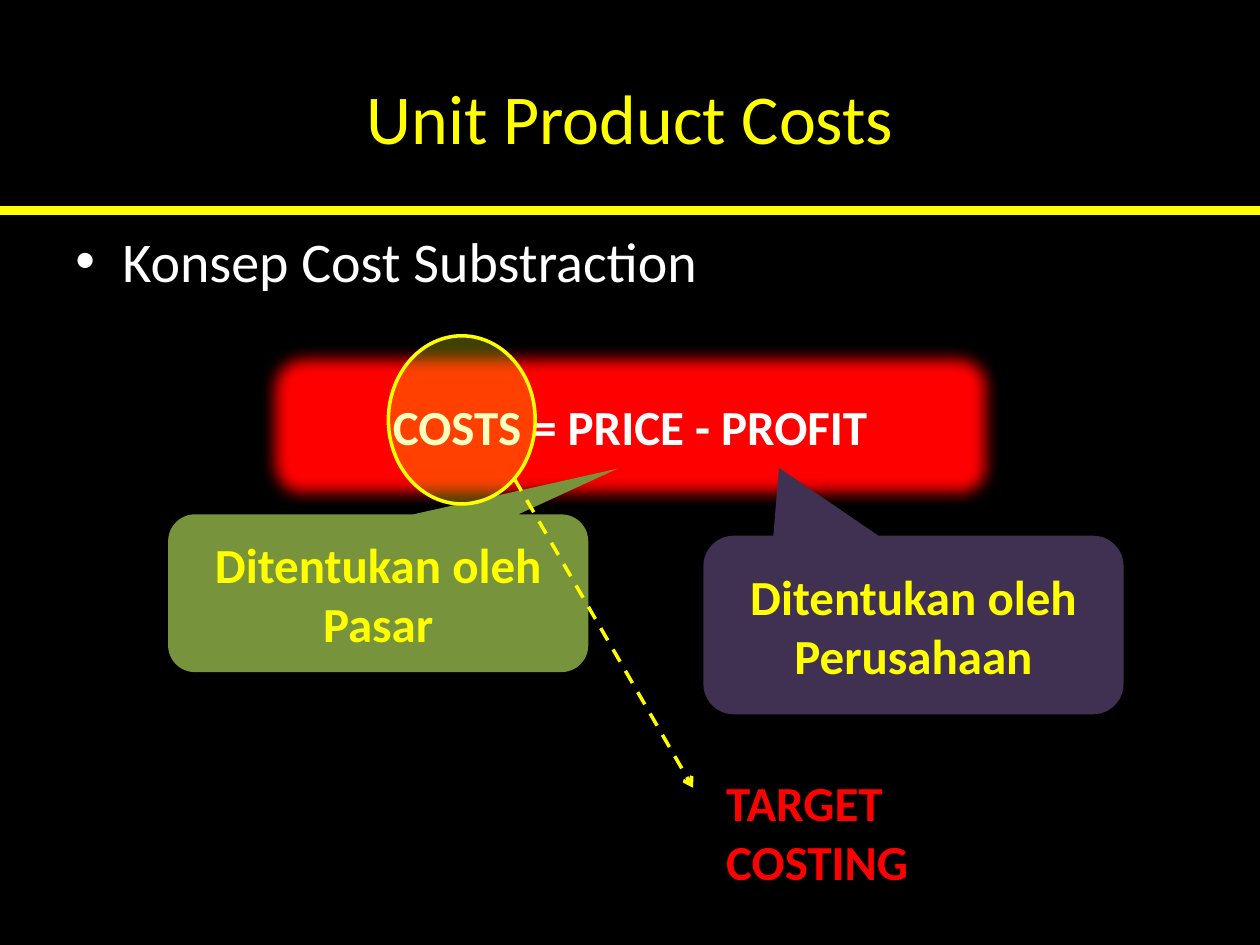
"""Build the slide on unit product costs and target costing."""
from lxml.etree import SubElement as Sub
from pptx import Presentation
from pptx.dml.color import RGBColor as Rgb
from pptx.enum.dml import MSO_LINE as Dash
from pptx.enum.shapes import MSO_CONNECTOR as Link, MSO_SHAPE as Kind
from pptx.enum.text import MSO_ANCHOR as Anchor, PP_ALIGN as Align
from pptx.oxml.ns import qn
from pptx.util import Cm, Pt

HUES = {
    "back": "000000", "text": "FFFFFF", "mark": "FFFF00", "alert": "FF0000",
    "edge": "3A5F8C", "market": "77933C", "firm": "403152",
}


def hue(name):
    return Rgb.from_string(HUES[name])


class Deck:
    def __init__(self, font):
        self.font = font
        self.prs = Presentation()
        self.prs.slide_width, self.prs.slide_height = Cm(25.4), Cm(19.05)
        self.slide = self.prs.slides.add_slide(self.prs.slide_layouts[5])
        fill = self.slide.background.fill
        fill.solid()
        fill.fore_color.rgb = hue("back")

    def put(self, frame, text, size, color, bold=False, align=Align.LEFT, anchor=Anchor.TOP):
        frame.word_wrap = True
        frame.vertical_anchor = anchor
        par = frame.paragraphs[0]
        par.text, par.alignment = text, align
        font = par.font
        font.name, font.size, font.bold = self.font, Pt(size), bold
        font.color.rgb = hue(color)
        return par

    def title(self, box, text):
        item = self.slide.shapes.title
        item.left, item.top, item.width, item.height = map(Cm, box)
        self.put(item.text_frame, text, 40, "mark", align=Align.CENTER, anchor=Anchor.MIDDLE)

    def label(self, box, text, size, color, bold=False):
        item = self.slide.shapes.add_textbox(*map(Cm, box))
        return self.put(item.text_frame, text, size, color, bold)

    def bullet(self, box, text):
        par = self.label(box, text, 32, "text")
        par.space_before = Pt(6.4)
        props = par._p.get_or_add_pPr()
        props.set("marL", str(Cm(0.95)))
        props.set("indent", str(-Cm(0.95)))
        font = Sub(props, qn("a:buFont"), typeface="Arial")
        char = Sub(props, qn("a:buChar"), char="•")
        props.find(qn("a:defRPr")).addprevious(font)
        font.addnext(char)

    def shape(self, kind, box, fill, edge=None, text="", color="mark", tip=(), alpha=None, soft=None):
        item = self.slide.shapes.add_shape(kind, *map(Cm, box))
        item.shadow.inherit = False
        item.fill.solid()
        item.fill.fore_color.rgb = hue(fill)
        if edge:
            item.line.color.rgb, item.line.width = hue(edge), Pt(2)
        else:
            item.line.fill.background()
        for spot, value in enumerate(tip):
            item.adjustments[spot] = value
        props = item._element.spPr
        if alpha:
            tint = props.find(qn("a:solidFill")).find(qn("a:srgbClr"))
            Sub(tint, qn("a:alpha"), val=str(alpha * 1000))
        if soft:
            Sub(props.find(qn("a:effectLst")), qn("a:softEdge"), rad=str(Cm(soft)))
        if text:
            self.put(item.text_frame, text, 28, color, True, Align.CENTER, Anchor.MIDDLE)

    def line(self, start, end, width, arrow=False):
        item = self.slide.shapes.add_connector(Link.STRAIGHT, *map(Cm, start + end))
        item.line.color.rgb, item.line.width = hue("mark"), Pt(width)
        props = item._element.spPr
        if arrow:
            item.line.dash_style = Dash.DASH
            Sub(props.find(qn("a:ln")), qn("a:tailEnd"), type="arrow")
        Sub(props, qn("a:effectLst"))


def main():
    deck = Deck("Calibri")
    deck.line((0, 4.24), (25.4, 4.24), 5)
    deck.title((1.27, 0.76, 22.86, 3.18), "Unit Product Costs")
    deck.bullet((1.27, 4.45, 22.86, 1.9), "Konsep Cost Substraction")
    deck.shape(Kind.ROUNDED_RECTANGLE, (5.29, 6.99, 14.82, 3.18), "alert", "edge",
               "COSTS = PRICE - PROFIT", "text", soft=0.31)
    for box, fill, who, tip in (
        ((3.39, 10.37, 8.47, 3.18), "market", "Pasar", (0.57, -0.79, 0.17)),
        ((14.18, 10.8, 8.47, 3.6), "firm", "Perusahaan", (-0.32, -0.88, 0.17)),
    ):
        deck.shape(Kind.ROUNDED_RECTANGULAR_CALLOUT, box, fill,
                   text=f"Ditentukan oleh {who}", tip=tip)
    deck.shape(Kind.OVAL, (7.83, 6.77, 2.96, 3.39), "mark", "mark", alpha=25)
    deck.line((10.37, 9.65), (13.97, 15.88), 2, arrow=True)
    deck.label((14.39, 15.45, 5.29, 2.65), "TARGET COSTING", 28, "alert", True)
    deck.prs.save("out.pptx")


if __name__ == "__main__":
    main()
